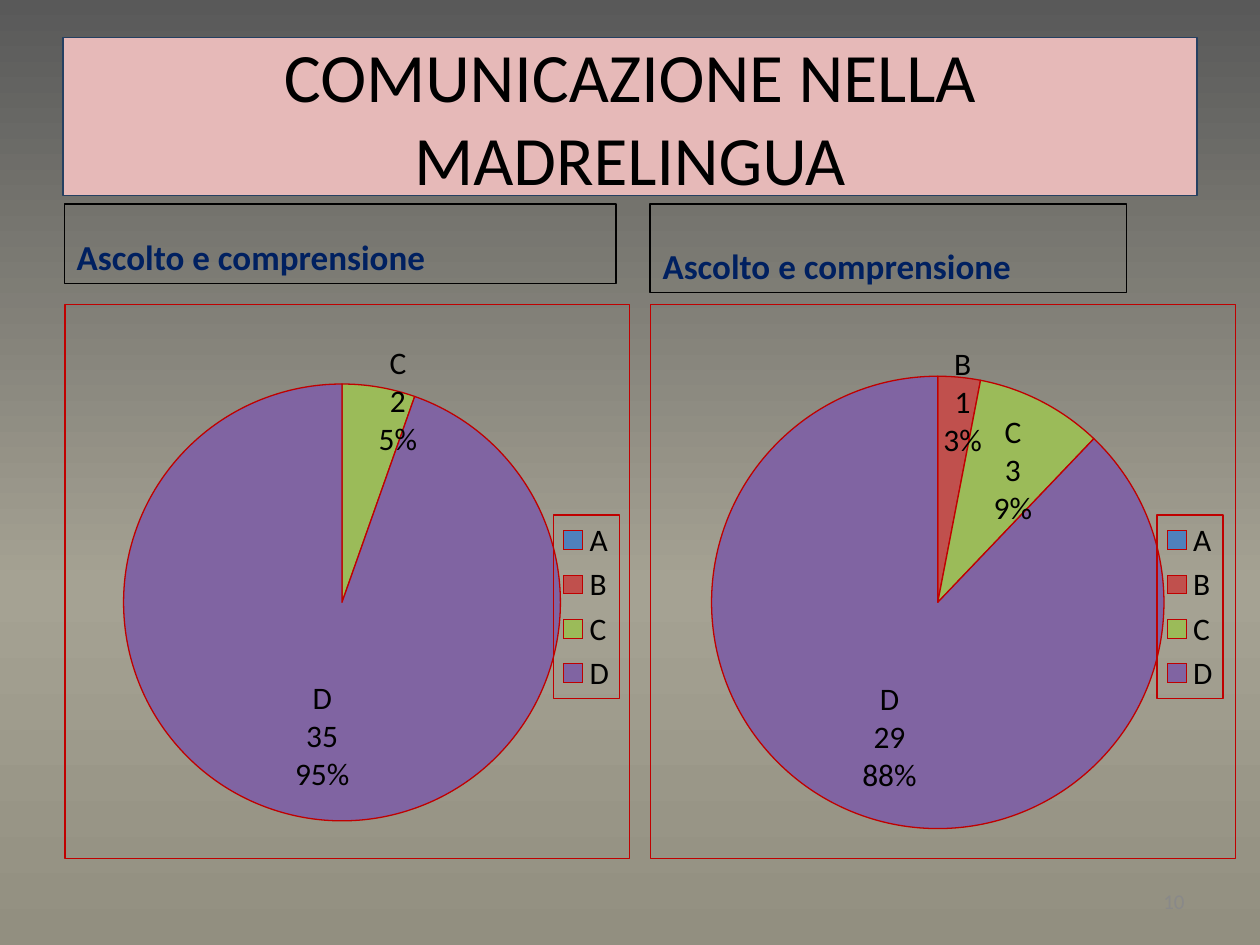
from copy import deepcopy
from pptx import Presentation, util as u
from pptx.chart.data import CategoryChartData
from pptx.dml.color import RGBColor
from pptx.enum import chart as ch, text
from pptx.oxml import parse_xml
from pptx.oxml.ns import nsdecls, qn

W, H = 10, 7.5
FONT = "Calibri"
HEX = {"ink": "000000", "navy": "002060", "pink": "E6B9B8", "edge": "254061",
       "red": "C00000", "grey": "898989"}
SLICES = {"A": "4F81BD", "B": "C0504D", "C": "9BBB59", "D": "8064A2"}
STOPS = [(0, "595959"), (0.62, "A5A293"), (1, "928F80")]
LEFT, RIGHT = 0.51, 5.16  # column edges
TOP, BASE = 2.41, 6.82    # chart row


def rgb(code):
    return RGBColor.from_string(code)


def inches(box):
    return [u.Inches(n) for n in box]


def style(font, size, color, bold=False):
    font.name, font.size, font.bold = FONT, u.Pt(size), bold
    font.color.rgb = rgb(color)


def outline(line, color):
    line.color.rgb = rgb(color)
    line.width = u.Pt(0.75)


def backdrop(slide):
    fill = slide.background.fill
    fill.gradient()
    fill.gradient_angle = 270
    first = fill.gradient_stops[0]._gs
    first.addnext(deepcopy(first))
    for stop, (pos, color) in zip(fill.gradient_stops, STOPS):
        stop.position = pos
        stop.color.rgb = rgb(color)


def title(slide, box, words):
    shape = slide.shapes.title
    shape.left, shape.top, shape.width, shape.height = inches(box)
    shape.fill.solid()
    shape.fill.fore_color.rgb = rgb(HEX["pink"])
    outline(shape.line, HEX["edge"])
    frame = shape.text_frame
    frame.text = words
    frame.vertical_anchor = text.MSO_ANCHOR.MIDDLE
    frame.paragraphs[0].alignment = text.PP_ALIGN.CENTER
    style(frame.paragraphs[0].font, 39.6, HEX["ink"])


def label(slide, box, words, size, color, bold=False):
    shape = slide.shapes.add_textbox(*inches(box))
    frame = shape.text_frame
    frame.word_wrap = True
    frame.text = words
    frame.vertical_anchor = text.MSO_ANCHOR.BOTTOM
    style(frame.paragraphs[0].font, size, color, bold)
    return shape


def heading(slide, box, words):
    shape = label(slide, box, words, 20, HEX["navy"], True)
    outline(shape.line, HEX["ink"])


def border(color):
    return parse_xml(
        f'<c:spPr {nsdecls("c", "a")}><a:noFill/><a:ln w="9525"><a:solidFill>'
        f'<a:srgbClr val="{color}"/></a:solidFill></a:ln></c:spPr>')


def layout(spots, edge=True, inner=False):
    """Manual layout: x, y and, if given, width and height as shares."""
    target = '<c:layoutTarget val="inner"/>' if inner else ""
    modes = '<c:xMode val="edge"/><c:yMode val="edge"/>' if edge else ""
    sizes = "".join(f'<c:{k} val="{v}"/>' for k, v in zip("xywh", spots))
    return parse_xml(f'<c:layout {nsdecls("c")}><c:manualLayout>{target}'
                     f'{modes}{sizes}</c:manualLayout></c:layout>')


def tag(i, shift):
    """Label of one slice, moved by a share of the chart; none if no shift."""
    node = parse_xml(f'<c:dLbl {nsdecls("c")}><c:idx val="{i}"/></c:dLbl>')
    if shift is None:
        node.append(parse_xml(f'<c:delete {nsdecls("c")} val="1"/>'))
        return node
    node.append(layout(shift, edge=False))
    parts = {"dLblPos": "inEnd", "showLegendKey": 0, "showVal": 1,
             "showCatName": 1, "showSerName": 0, "showPercent": 1,
             "showBubbleSize": 0}
    for name, val in parts.items():
        node.append(parse_xml(f'<c:{name} {nsdecls("c")} val="{val}"/>'))
    node.append(gap())
    return node


def gap():
    return parse_xml(f'<c:separator {nsdecls("c")}>\n</c:separator>')


def pie(slide, box, values, drop, shifts):
    data = CategoryChartData()
    data.categories = list(SLICES)
    data.add_series("Series 1", values)
    chart = slide.shapes.add_chart(
        ch.XL_CHART_TYPE.PIE, *inches(box), data).chart
    style(chart.font, 18, HEX["ink"])
    chart.has_title = False

    # Frame and legend
    space = chart._chartSpace
    root = space.find(qn("c:chart"))
    root.addnext(border(HEX["red"]))
    chart.has_legend = True
    legend = chart.legend
    legend.position = ch.XL_LEGEND_POSITION.RIGHT
    legend.include_in_layout = False
    node = legend._element
    for old in node.findall(qn("c:layout")):
        node.remove(old)
    node.find(qn("c:legendPos")).addnext(layout((0.866, 0.33 + drop)))
    node.find(qn("c:overlay")).addnext(border(HEX["red"]))

    # Plot area
    area = root.find(qn("c:plotArea"))
    for old in area.findall(qn("c:layout")):
        area.remove(old)
    area.insert(0, layout((0.104, 0.041 + drop, 0.774, 0.924), inner=True))

    # Slices and labels
    plot = chart.plots[0]
    plot.vary_by_categories = True
    series = plot.series[0]
    outline(series.format.line, HEX["red"])
    for i, color in enumerate(SLICES.values()):
        form = series.points[i].format
        form.fill.solid()
        form.fill.fore_color.rgb = rgb(color)
        outline(form.line, HEX["red"])
    tags = series.data_labels
    tags.show_value = tags.show_percentage = tags.show_category_name = True
    tags.show_legend_key = False
    tags.position = ch.XL_LABEL_POSITION.INSIDE_END
    style(tags.font, 18, HEX["ink"])
    node = tags._element
    node.find(qn("c:showBubbleSize")).addnext(gap())
    for lead in node.findall(qn("c:showLeaderLines")):
        lead.set("val", "0")
    for i, name in enumerate(SLICES):
        node.insert(i, tag(i, shifts.get(name)))


def main():
    deck = Presentation()
    deck.slide_width, deck.slide_height = inches((W, H))
    slide = deck.slides.add_slide(deck.slide_layouts[5])
    backdrop(slide)
    title(slide, (0.05 * W, 0.04 * H, 0.9 * W, 1.25),
          "COMUNICAZIONE NELLA MADRELINGUA")
    left = {"C": (0.07, -0.09), "D": (-0.02, -0.03)}
    right = {"B": (0.04, -0.07), "C": (-0.01, 0.01), "D": (0.01, -0.02)}
    for x, wide, high, span, values, drop, shifts in (
            (LEFT, 4.38, 0.63, 4.49, (0, 0, 2, 35), 0.05, left),
            (RIGHT, 3.78, 0.7, 4.65, (0, 1, 3, 29), 0.05, right)):
        heading(slide, (x, 1.62, wide, high), "Ascolto e comprensione")
        pie(slide, (x, TOP, span, BASE - TOP), values, drop, shifts)

    # Page number
    page = label(slide, (7.17, 6.95, 2.33, 0.4), "10", 12, HEX["grey"])
    page.text_frame.vertical_anchor = text.MSO_ANCHOR.MIDDLE
    page.text_frame.paragraphs[0].alignment = text.PP_ALIGN.RIGHT
    deck.save("out.pptx")


if __name__ == "__main__":
    main()
